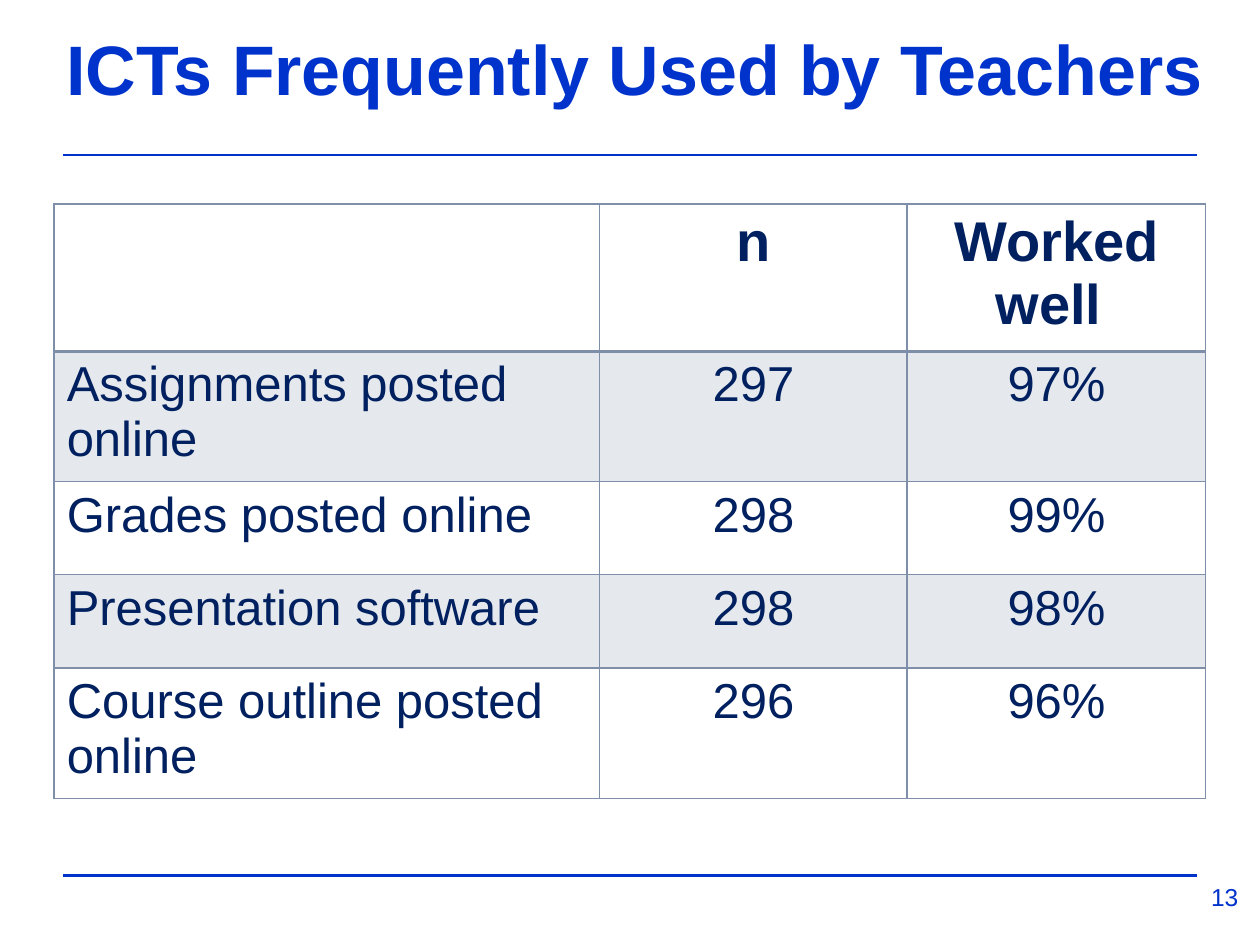
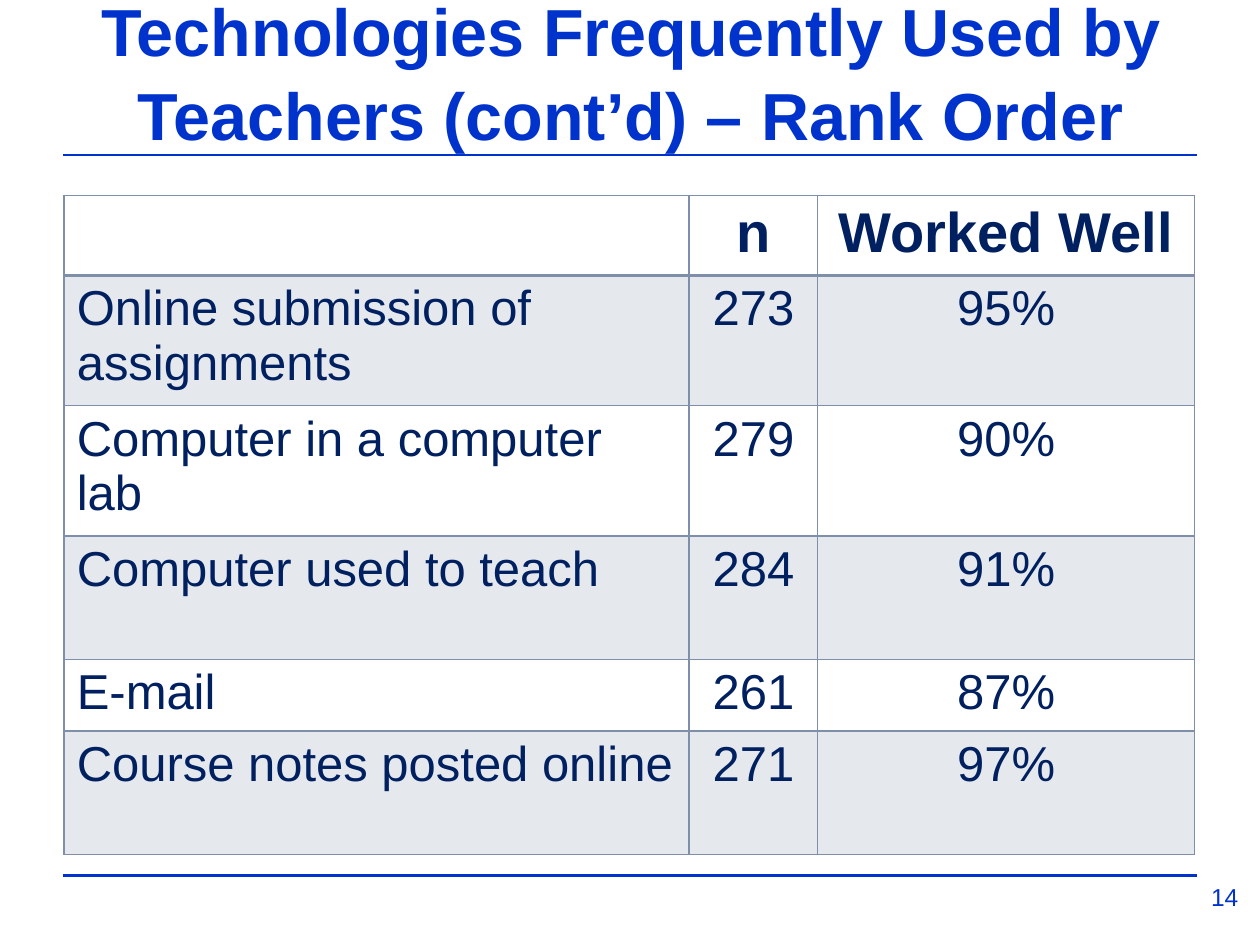
from lxml import etree
from pptx import Presentation
from pptx.dml.color import RGBColor
from pptx.enum import shapes, text
from pptx.oxml import ns
from pptx.util import Inches, Pt

COLORS = {"blue": "0033CC", "navy": "002060", "grid": "7F8FA9"}
FONT = "Arial"
WIDTH, HEIGHT = 10, 7.5
MARGIN = 0.05 * WIDTH
RULES = (1.23, 6.95)
NUMBER_BOX = (9.44, 6.95, 0.56, 0.42)
SHADE_ALPHA = 20

SLIDES = [
    {
        "number": "13",
        "title": "ICTs Frequently Used by Teachers",
        "title_box": (0.35, 0.17, 9.37, 0.75),
        "title_size": 40,
        "title_spacing": 1,
        "table_at": (0.43, 1.62),
        "columns": (4.33, 2.44, 2.37),
        "rows": (1.1, 0.97, 0.74, 0.74, 0.97),
        "cells": [
            ("", "n", "Worked well "),
            ("Assignments posted online", "297", "97%"),
            ("Grades posted online", "298", "99%"),
            ("Presentation software", "298", "98%"),
            ("Course outline posted online", "296", "96%"),
        ],
    },
    {
        "number": "14",
        "title": "Technologies Frequently Used by Teachers (cont’d) – Rank Order",
        "title_box": (0.51, 0.52, 9, 0.75),
        "title_size": 38,
        "title_spacing": 1.05,
        "table_at": (0.51, 1.55),
        "columns": (4.96, 1.02, 2.99),
        "rows": (0.6, 0.98, 0.98, 0.98, 0.57, 0.98),
        "cells": [
            ("", "n", "Worked Well"),
            ("Online submission of assignments", "273", "95%"),
            ("Computer in a computer lab", "279", "90%"),
            ("Computer used to teach", "284", "91%"),
            ("E-mail", "261", "87%"),
            ("Course notes posted online", "271", "97%"),
        ],
    },
]


def color(name):
    return RGBColor.from_string(COLORS[name])


def write(frame, words, size, color_name, bold=False, centered=True):
    paragraph = frame.paragraphs[0]
    paragraph.text = words
    paragraph.alignment = text.PP_ALIGN.CENTER if centered else text.PP_ALIGN.LEFT
    paragraph.font.name = FONT
    paragraph.font.size = Pt(size)
    paragraph.font.bold = bold
    paragraph.font.color.rgb = color(color_name)
    return paragraph


def add_text(slide, box, words, size, bold=False, anchor=text.MSO_ANCHOR.TOP):
    frame = slide.shapes.add_textbox(*map(Inches, box)).text_frame
    frame.word_wrap = True
    frame.vertical_anchor = anchor
    return write(frame, words, size, "blue", bold)


def add_rule(slide, y):
    ends = (MARGIN, y, WIDTH - MARGIN, y)
    rule = slide.shapes.add_connector(shapes.MSO_CONNECTOR.STRAIGHT, *map(Inches, ends))
    rule.line.color.rgb = color("blue")
    rule.line.width = Pt(1.5)
    etree.SubElement(rule._element.spPr, ns.qn("a:effectLst"))


def set_borders(cell, widths):
    properties = cell._tc.get_or_add_tcPr()
    for index, (side, width) in enumerate(widths.items()):
        line = etree.Element(ns.qn(f"a:ln{side}"), w=str(Pt(width)))
        fill = etree.SubElement(line, ns.qn("a:solidFill"))
        etree.SubElement(fill, ns.qn("a:srgbClr"), val=COLORS["grid"])
        properties.insert(index, line)


def shade(cell):
    cell.fill.solid()
    cell.fill.fore_color.rgb = color("grid")
    tint = cell._tc.tcPr.find(".//" + ns.qn("a:srgbClr"))
    etree.SubElement(tint, ns.qn("a:alpha"), val=str(SHADE_ALPHA * 1000))


def add_table(slide, content):
    columns, rows = content["columns"], content["rows"]
    box = (*content["table_at"], sum(columns), sum(rows))
    table = slide.shapes.add_table(len(rows), len(columns), *map(Inches, box)).table
    for column, width in zip(table.columns, columns):
        column.width = Inches(width)
    for row, height in zip(table.rows, rows):
        row.height = Inches(height)
    for row_index, row in enumerate(content["cells"]):
        header = row_index == 0
        for column_index, words in enumerate(row):
            cell = table.cell(row_index, column_index)
            write(cell.text_frame, words, 32 if header else 28, "navy",
                  bold=header, centered=header or column_index > 0)
            if row_index % 2:
                shade(cell)
            else:
                cell.fill.background()
            set_borders(cell, {"L": 1, "R": 1,
                               "T": 2 if row_index == 1 else 1,
                               "B": 2 if header else 1})


def main():
    presentation = Presentation()
    presentation.slide_width = Inches(WIDTH)
    presentation.slide_height = Inches(HEIGHT)
    for content in SLIDES:
        slide = presentation.slides.add_slide(presentation.slide_layouts[6])
        for y in RULES:
            add_rule(slide, y)
        title = add_text(slide, content["title_box"], content["title"],
                         content["title_size"], True, text.MSO_ANCHOR.BOTTOM)
        title.line_spacing = content["title_spacing"]
        add_table(slide, content)
        add_text(slide, NUMBER_BOX, content["number"], 14)
    presentation.save("out.pptx")


if __name__ == "__main__":
    main()
